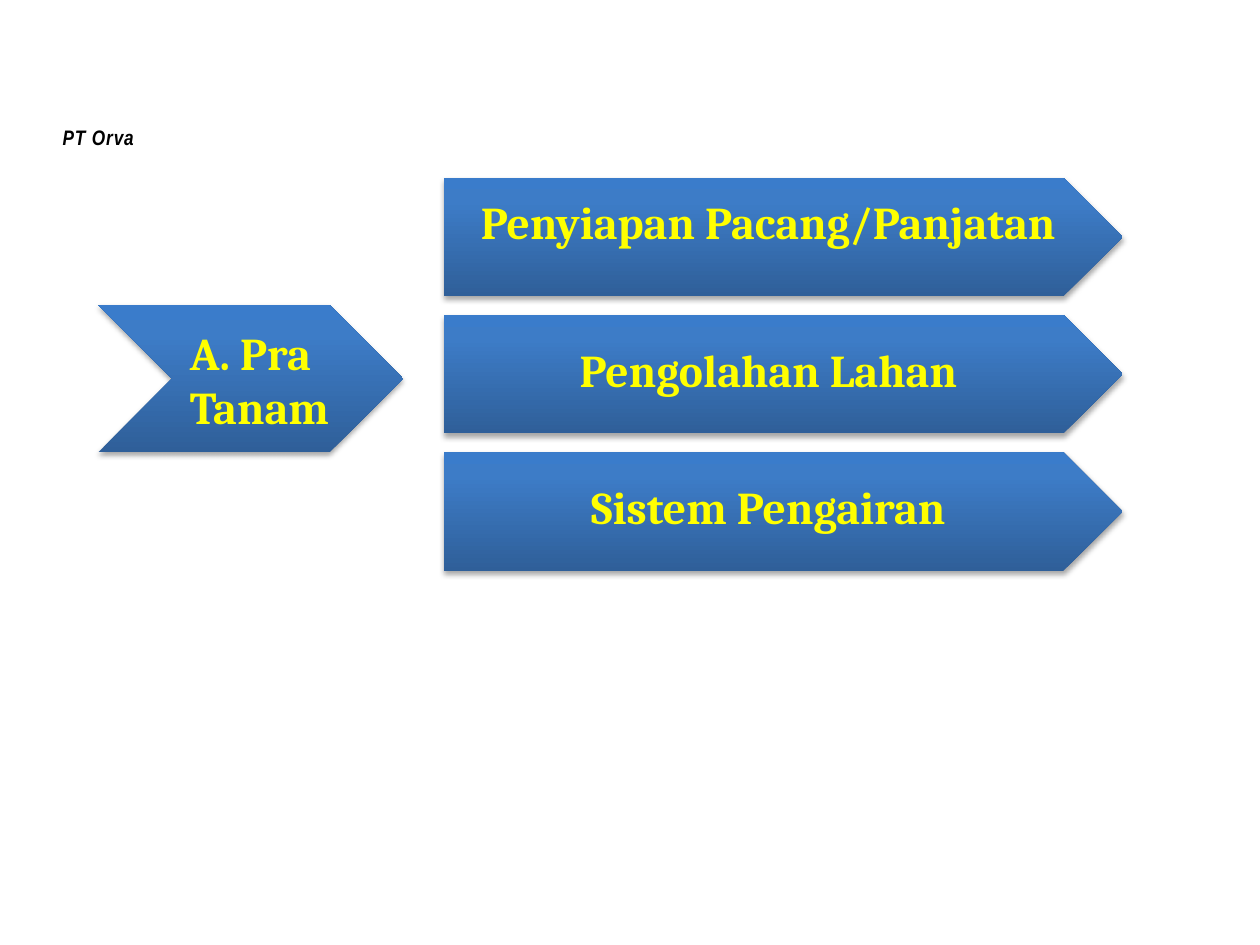
import copy

import lxml.etree
import pptx
import pptx.dml.color
import pptx.enum.shapes
import pptx.enum.text
import pptx.oxml
import pptx.oxml.ns
import pptx.util
from pptx.util import Inches

RGBColor = pptx.dml.color.RGBColor
SHAPE = pptx.enum.shapes.MSO_SHAPE
ALIGN = pptx.enum.text.PP_ALIGN
ANCHOR = pptx.enum.text.MSO_ANCHOR

YELLOW = RGBColor(0xFF, 0xFF, 0x00)
BLACK = RGBColor(0x00, 0x00, 0x00)
ARROW_STOPS = [
    (0, RGBColor(0x2F, 0x5F, 0x99)),
    (0.8, RGBColor(0x3D, 0x7C, 0xC7)),
    (1, RGBColor(0x3A, 0x7C, 0xCB)),
]

STEP_FONT = {"name": "Cambria", "size": pptx.util.Pt(26), "bold": True}
COMPANY_FONT = {"name": "Arial Narrow", "size": pptx.util.Pt(12),
                "bold": True, "italic": True}


def add_shadow(effects):
    """Append a soft downward shadow to an effect list."""
    effects.append(pptx.oxml.parse_xml(
        f'<a:outerShdw {pptx.oxml.ns.nsdecls("a")} blurRad="40000" dist="23000" '
        'dir="5400000" rotWithShape="0"><a:srgbClr val="000000">'
        '<a:alpha val="35000"/></a:srgbClr></a:outerShdw>'))


def add_arrow(parent, preset, left, top, width, height):
    """Add a block arrow, dark at the bottom and lighter at the top."""
    arrow = parent.shapes.add_shape(
        preset, Inches(left), Inches(top), Inches(width), Inches(height))
    arrow.line.fill.background()
    arrow.fill.gradient()
    arrow.fill.gradient_angle = 90
    stop_list = arrow._element.spPr.find(".//" + pptx.oxml.ns.qn("a:gsLst"))
    stop_list.append(copy.deepcopy(stop_list[-1]))
    for stop, (position, color) in zip(arrow.fill.gradient_stops, ARROW_STOPS):
        stop.position = position
        stop.color.rgb = color
    arrow.shadow.inherit = False
    add_shadow(arrow._element.spPr.find(pptx.oxml.ns.qn("a:effectLst")))


def add_label(parent, lines, left, top, width, height, font, color,
              align=ALIGN.CENTER, anchor=ANCHOR.MIDDLE):
    """Add a wrapped text box with one paragraph per line."""
    label = parent.shapes.add_textbox(
        Inches(left), Inches(top), Inches(width), Inches(height))
    frame = label.text_frame
    frame.word_wrap = True
    frame.vertical_anchor = anchor
    frame.text = "\n".join(lines)
    for paragraph in frame.paragraphs:
        paragraph.alignment = align
        for run in paragraph.runs:
            for attribute, value in font.items():
                setattr(run.font, attribute, value)
            run.font.color.rgb = color
    return label


def add_company(slide):
    """Add the company name with spaced, shadowed letters."""
    company = add_label(slide, ["PT Orva"], 0.39, 0.94, 0.78, 0.3,
                        COMPANY_FONT, BLACK, anchor=ANCHOR.TOP)
    properties = company.text_frame.paragraphs[0].runs[0]._r.get_or_add_rPr()
    properties.set("spc", "50")
    effects = lxml.etree.Element(pptx.oxml.ns.qn("a:effectLst"))
    add_shadow(effects)
    properties.find(pptx.oxml.ns.qn("a:solidFill")).addnext(effects)


def main():
    deck = pptx.Presentation()
    deck.slide_width, deck.slide_height = Inches(10), Inches(7.5)
    slide = deck.slides.add_slide(deck.slide_layouts[6])

    # Stage
    stage = slide.shapes.add_group_shape()
    add_arrow(stage, SHAPE.CHEVRON, 0.78, 2.42, 2.42, 1.17)
    add_label(stage, ["A. Pra", "Tanam"], 1.41, 2.66, 1.56, 0.7,
              STEP_FONT, YELLOW, align=ALIGN.LEFT)

    # Steps of the stage, with the first label slightly raised
    steps = [("Penyiapan Pacang/Panjatan", 0.08),
             ("Pengolahan Lahan", 0), ("Sistem Pengairan", 0)]
    for index, (name, lift) in enumerate(steps):
        top = 1.41 + 1.09 * index
        step = slide.shapes.add_group_shape()
        add_arrow(step, SHAPE.PENTAGON, 3.52, top, 5.39, 0.94)
        add_label(step, [name], 3.52, top - lift, 5.16, 0.86, STEP_FONT, YELLOW)

    # Company name
    add_company(slide)
    deck.save("out.pptx")


if __name__ == "__main__":
    main()
